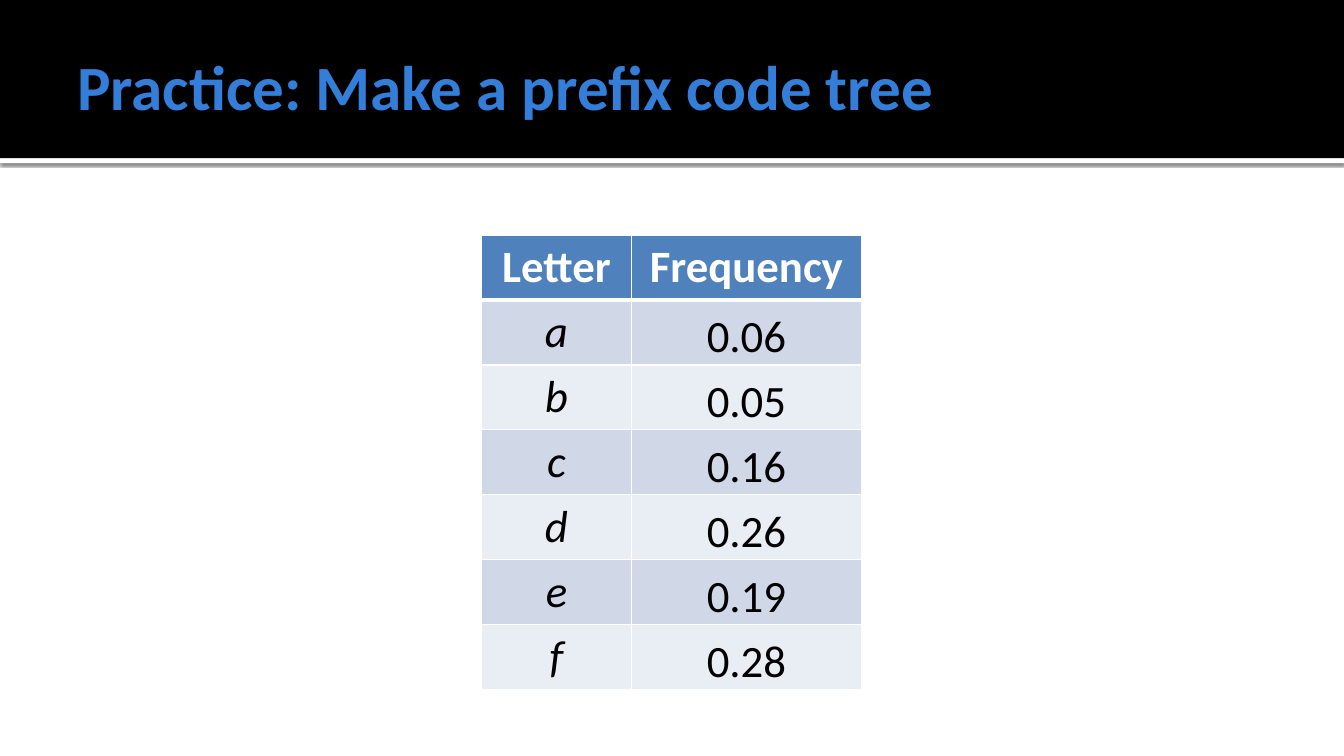
from dataclasses import dataclass

from lxml.etree import SubElement
from pptx import Presentation
from pptx.dml.color import RGBColor as Color
from pptx.enum.shapes import MSO_SHAPE as Shape
from pptx.enum.text import MSO_ANCHOR as Anchor, PP_ALIGN as Align
from pptx.oxml.ns import qn
from pptx.util import Pt


@dataclass(frozen=True)
class Theme:
    font: str = "Calibri"
    title_size: float = 45
    table_size: float = 32
    white: str = "FFFFFF"
    black: str = "000000"
    title: str = "337ED9"
    header: str = "4F81BD"
    bands: tuple = ("D0D8E8", "E9EDF4")


class SlideBuilder:
    def __init__(self, deck, theme):
        self.theme = theme
        self.slide = deck.slides.add_slide(deck.slide_layouts[5])

    def add_text(self, para, text, size, color, bold=False, italic=False):
        run = para.add_run()
        run.text = text
        font = run.font
        font.name = self.theme.font
        font.size = Pt(size)
        font.bold = bold
        font.italic = italic
        font.color.rgb = Color.from_string(color)

    def bar(self, left, top, width, height, color):
        box = self.slide.shapes.add_shape(
            Shape.RECTANGLE, Pt(left), Pt(top), Pt(width), Pt(height))
        box.fill.solid()
        box.fill.fore_color.rgb = Color.from_string(color)
        box.line.fill.background()
        box.shadow.inherit = False
        return box

    def shadow(self, box, blur, distance, percent):
        effects = box.element.spPr.find(qn("a:effectLst"))
        outer = SubElement(
            effects, qn("a:outerShdw"), blurRad=str(Pt(blur)),
            dist=str(Pt(distance)), dir="5400000", algn="t", rotWithShape="0")
        tint = SubElement(outer, qn("a:srgbClr"), val=self.theme.black)
        SubElement(tint, qn("a:alpha"), val=str(percent * 1000))

    def title(self, text, left, top, width, height):
        box = self.slide.shapes.title
        box.left, box.top, box.width, box.height = map(
            Pt, (left, top, width, height))
        frame = box.text_frame
        frame.word_wrap = True
        frame.vertical_anchor = Anchor.MIDDLE
        frame.margin_left = Pt(7.2)
        frame.margin_top = frame.margin_right = frame.margin_bottom = Pt(3.6)
        para = frame.paragraphs[0]
        para.alignment = Align.LEFT
        self.add_text(para, text, self.theme.title_size, self.theme.title, bold=True)
        box.element.getparent().append(box.element)

    def borders(self, cell, top, bottom):
        properties = cell._tc.get_or_add_tcPr()
        for side, width in (("L", 1), ("R", 1), ("T", top), ("B", bottom)):
            line = SubElement(properties, qn(f"a:ln{side}"), w=str(Pt(width)))
            fill = SubElement(line, qn("a:solidFill"))
            SubElement(fill, qn("a:srgbClr"), val=self.theme.white)

    def table(self, rows, left, top, widths, row_height):
        theme = self.theme
        table = self.slide.shapes.add_table(
            len(rows), len(widths), Pt(left), Pt(top),
            Pt(sum(widths)), Pt(row_height * len(rows))).table
        table.horz_banding = False
        for column, width in zip(table.columns, widths):
            column.width = Pt(width)
        for r, values in enumerate(rows):
            table.rows[r].height = Pt(row_height)
            header = r == 0
            for c, value in enumerate(values):
                cell = table.cell(r, c)
                self.borders(cell, 3 if r == 1 else 1, 3 if header else 1)
                cell.fill.solid()
                cell.fill.fore_color.rgb = Color.from_string(
                    theme.header if header else theme.bands[(r - 1) % 2])
                if c == 1 and not header:
                    cell.vertical_anchor = Anchor.BOTTOM
                    cell.margin_left = cell.margin_right = Pt(0.72)
                    cell.margin_top, cell.margin_bottom = Pt(0.72), 0
                para = cell.text_frame.paragraphs[0]
                para.alignment = Align.CENTER
                self.add_text(para, value, theme.table_size,
                              theme.white if header else theme.black,
                              bold=header, italic=c == 0 and not header)


def main():
    deck = Presentation()
    deck.slide_width, deck.slide_height = Pt(960), Pt(540)
    theme = Theme()
    page = SlideBuilder(deck, theme)

    strip = page.bar(0, 113, 960, 3.6, theme.white)
    page.shadow(strip, blur=2.5, distance=0.8, percent=60)
    page.bar(0, 0, 960, 113, theme.black)
    page.title("Practice: Make a prefix code tree", 48, 12, 864, 98.6)
    page.table(
        [("Letter", "Frequency"), ("a", "0.06"), ("b", "0.05"), ("c", "0.16"),
         ("d", "0.26"), ("e", "0.19"), ("f", "0.28")],
        left=344.2, top=168, widths=(106.6, 164.9), row_height=46.3)

    deck.save("out.pptx")


if __name__ == "__main__":
    main()
